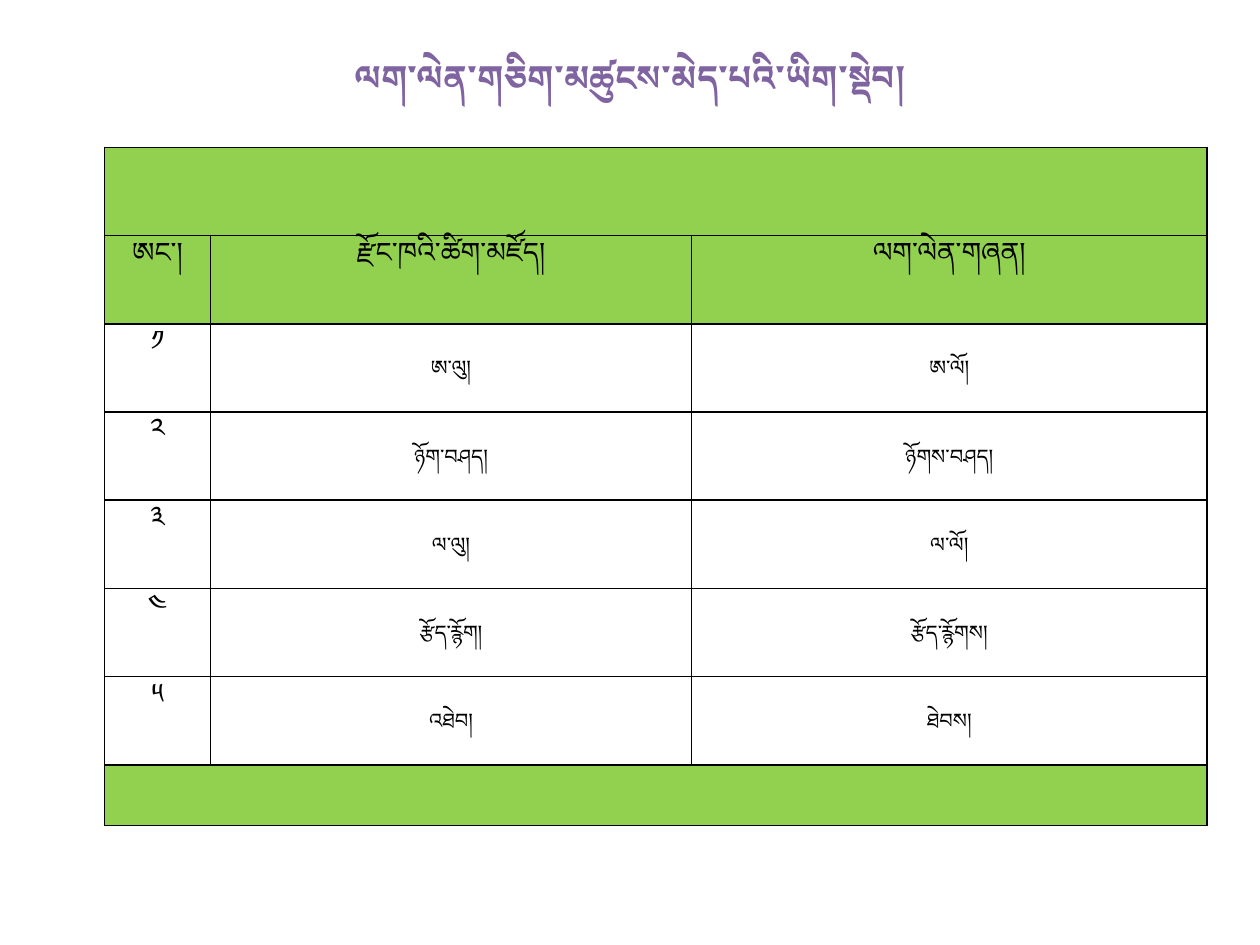
from lxml.etree import SubElement
from pptx import Presentation
from pptx.dml.color import RGBColor
from pptx.enum.text import MSO_ANCHOR, PP_ALIGN
from pptx.oxml.ns import qn
from pptx.util import Inches, Pt

COLORS = {"title": "8064A2", "band": "92D050", "ink": "000000"}
TITLE = "ལག་ལེན་གཅིག་མཚུངས་མེད་པའི་ཡིག་སྡེབ།"
HEADINGS = ("ཨང་།", "རྫོང་ཁའི་ཚིག་མཛོད།", "ལག་ལེན་གཞན།")
SPELLINGS = [
    ("༡", "ཨ་ལུ།", "ཨ་ལོ།"),
    ("༢", "ཉོག་བཤད།", "ཉོགས་བཤད།"),
    ("༣", "ལ་ལུ།", "ལ་ལོ།"),
    ("༤", "རྩོད་རྙོག།", "རྩོད་རྙོགས།"),
    ("༥", "འཐེབ།", "ཐེབས།"),
]
COLUMN_WIDTHS = (0.84, 3.82, 4.09)
ROW_HEIGHT, LAST_ROW_HEIGHT = 0.7, 0.48
TITLE_FONT = {"name": "Lato", "size": Pt(20), "bold": True}
LARGE_FONT = {"name": "Calibri", "size": Pt(16), "bold": False}
SMALL_FONT = {**LARGE_FONT, "size": Pt(12)}
CELL_MARGINS = {"margin_left": Inches(0.07), "margin_right": Inches(0.07),
                "margin_top": 0, "margin_bottom": 0}


def set_all(target, values):
    for name, value in values.items():
        setattr(target, name, value)


def write_text(frame, text, font, color):
    para = frame.paragraphs[0]
    para.alignment = PP_ALIGN.CENTER
    span = para.add_run()
    span.text = text
    set_all(span.font, font)
    span.font.color.rgb = RGBColor.from_string(COLORS[color])
    return para


def add_title(page):
    box = page.shapes.add_textbox(Inches(0.5), Inches(0.3), Inches(9), Inches(0.95))
    set_all(box.text_frame, {"word_wrap": True, "margin_bottom": Inches(0.38),
                             "vertical_anchor": MSO_ANCHOR.MIDDLE})
    write_text(box.text_frame, TITLE, TITLE_FONT, "title")


def add_borders(cell):
    properties = cell._tc.get_or_add_tcPr()
    for side in ("lnL", "lnR", "lnT", "lnB"):
        line = SubElement(properties, qn(f"a:{side}"), w=str(Pt(1)))
        fill = SubElement(line, qn("a:solidFill"))
        SubElement(fill, qn("a:srgbClr"), val=COLORS["ink"])


def paint_cell(cell, green):
    add_borders(cell)
    if green:
        cell.fill.solid()
        cell.fill.fore_color.rgb = RGBColor.from_string(COLORS["band"])
    else:
        cell.fill.background()


def fill_cell(cell, text, font, anchor):
    set_all(cell, {**CELL_MARGINS, "vertical_anchor": anchor})
    write_text(cell.text_frame, text, font, "ink").line_spacing = 1.15


def add_spelling_table(page):
    # Green bands above and below, with headings and spellings between
    content = [HEADINGS, *SPELLINGS]
    heights = [ROW_HEIGHT] * (len(content) + 1) + [LAST_ROW_HEIGHT]
    last = len(heights) - 1
    table = page.shapes.add_table(
        len(heights), len(COLUMN_WIDTHS), Inches(0.83), Inches(1.17),
        Inches(sum(COLUMN_WIDTHS)), Inches(sum(heights))).table
    set_all(table, {"first_row": False, "horz_banding": False})
    for column, width in zip(table.columns, COLUMN_WIDTHS):
        column.width = Inches(width)
    for index, height in enumerate(heights):
        table.rows[index].height = Inches(height)
        for cell in table.rows[index].cells:
            paint_cell(cell, index in (0, 1, last))
    for index in (0, last):
        table.cell(index, 0).merge(table.cell(index, len(COLUMN_WIDTHS) - 1))

    # Numbers and headings are large and sit at the top
    for row, texts in enumerate(content, start=1):
        for column, text in enumerate(texts):
            large = row == 1 or column == 0
            fill_cell(table.cell(row, column), text,
                      LARGE_FONT if large else SMALL_FONT,
                      MSO_ANCHOR.TOP if large else MSO_ANCHOR.MIDDLE)


def main():
    deck = Presentation()
    set_all(deck, {"slide_width": Inches(10), "slide_height": Inches(7.5)})
    page = deck.slides.add_slide(deck.slide_layouts[6])
    add_title(page)
    add_spelling_table(page)
    deck.save("out.pptx")


if __name__ == "__main__":
    main()
